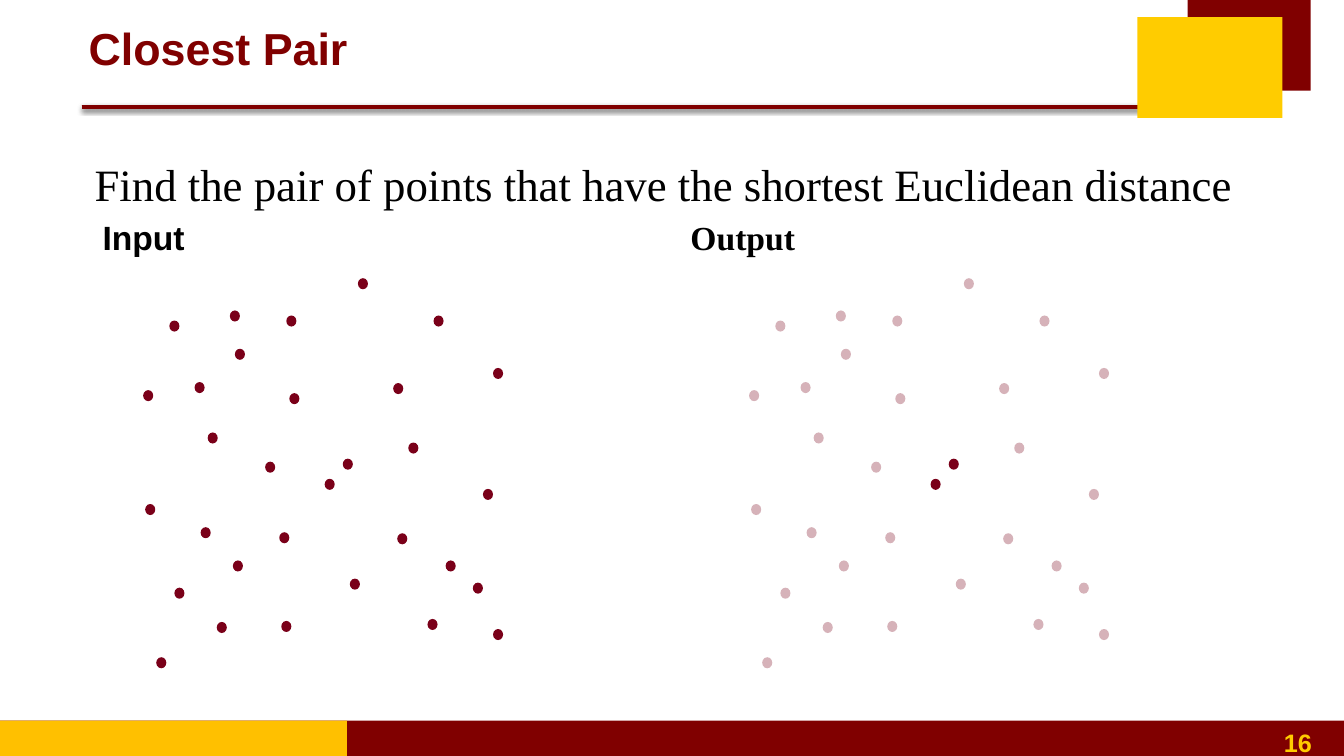
from dataclasses import dataclass
from itertools import combinations
from math import dist

from lxml import etree
from pptx import Presentation
from pptx.dml.color import RGBColor
from pptx.enum.shapes import MSO_CONNECTOR, MSO_SHAPE
from pptx.enum.text import MSO_ANCHOR, PP_ALIGN
from pptx.oxml.ns import qn
from pptx.util import Inches, Pt

MAROON = RGBColor(0x80, 0x00, 0x00)
RED = RGBColor(0xC0, 0x00, 0x00)
YELLOW = RGBColor(0xFF, 0xCC, 0x00)
AMBER = RGBColor(0xFF, 0xC0, 0x00)
DOT_COLOR = RGBColor(0x7A, 0x00, 0x19)
BLACK = RGBColor(0x00, 0x00, 0x00)

RECTANGLE = MSO_SHAPE.RECTANGLE
OVAL = MSO_SHAPE.OVAL
STRAIGHT = MSO_CONNECTOR.STRAIGHT
LEFT, CENTER, RIGHT = PP_ALIGN.LEFT, PP_ALIGN.CENTER, PP_ALIGN.RIGHT
TOP, MIDDLE = MSO_ANCHOR.TOP, MSO_ANCHOR.MIDDLE

SANS = "Arial"
SERIF = "Times New Roman"
DOT_WIDTH, DOT_HEIGHT = 0.1, 0.11
OUTPUT_OFFSET = 6.01
FADED_ALPHA = 30

Point = tuple[float, float]


@dataclass(frozen=True)
class Block:
    left: float
    top: float
    width: float
    height: float
    color: RGBColor


@dataclass(frozen=True)
class Label:
    text: str
    left: float
    top: float
    width: float
    height: float
    size: int
    font: str
    color: RGBColor = BLACK
    bold: bool = True
    align: PP_ALIGN = LEFT
    anchor: MSO_ANCHOR = TOP


BLOCKS = [
    Block(0, 7.15, 13.33, 0.35, MAROON),
    Block(11.78, 0, 1.22, 0.9, MAROON),
    Block(11.28, 0.17, 1.44, 1, YELLOW),
    Block(0, 7.15, 3.44, 0.35, AMBER),
]

LABELS = [
    Label("16", 10.33, 7.17, 2.78, 0.33, 18, SANS, YELLOW, align=RIGHT),
    Label("Closest Pair", 0.78, 0.06, 10.22, 0.83, 32, SANS, MAROON, anchor=MIDDLE),
    Label("Find the pair of points that have the shortest Euclidean distance",
          0.59, 1.51, 11.99, 0.64, 32, SERIF, bold=False, align=CENTER),
    Label("Input", 0.92, 2.1, 5.64, 0.64, 24, SANS),
    Label("Output", 6.75, 2.1, 5.67, 0.64, 24, SERIF),
]

POINTS: list[Point] = [
    (4.3, 3.13), (3.55, 2.76), (2.28, 3.08), (1.68, 3.18), (1.42, 3.87),
    (2.33, 3.46), (2.84, 3.13), (4.89, 3.65), (3.22, 4.75), (3.9, 3.8),
    (2.87, 3.9), (3.4, 4.55), (4.05, 4.39), (4.79, 4.85), (4.69, 5.78),
    (3.94, 5.29), (2.77, 5.28), (2.63, 4.58), (1.93, 3.79), (2.06, 4.29),
    (1.99, 5.23), (1.44, 5), (1.73, 5.83), (1.55, 6.52), (2.15, 6.17),
    (2.31, 5.56), (3.47, 5.74), (4.42, 5.56), (4.24, 6.14), (2.79, 6.16),
    (4.89, 6.24),
]


def add_rule(slide, color: RGBColor) -> None:
    rule = slide.shapes.add_connector(
        STRAIGHT, Inches(0.81), Inches(1.06), Inches(11.37), Inches(1.06))
    rule.line.color.rgb = color
    rule.line.width = Pt(3)
    effects = etree.SubElement(rule.element.spPr, qn("a:effectLst"))
    shadow = etree.SubElement(
        effects, qn("a:outerShdw"), blurRad=str(Pt(3.1)), dist=str(Pt(1.8)),
        dir="5400000", rotWithShape="0")
    shadow_color = etree.SubElement(shadow, qn("a:srgbClr"), val=str(BLACK))
    etree.SubElement(shadow_color, qn("a:alpha"), val="35000")


def add_filled(shapes, kind: MSO_SHAPE, block: Block):
    shape = shapes.add_shape(
        kind, Inches(block.left), Inches(block.top),
        Inches(block.width), Inches(block.height))
    shape.shadow.inherit = False
    shape.fill.solid()
    shape.fill.fore_color.rgb = block.color
    shape.line.fill.background()
    return shape


def add_label(slide, label: Label) -> None:
    box = slide.shapes.add_textbox(
        Inches(label.left), Inches(label.top),
        Inches(label.width), Inches(label.height))
    frame = box.text_frame
    frame.word_wrap = True
    frame.vertical_anchor = label.anchor
    paragraph = frame.paragraphs[0]
    paragraph.text = label.text
    paragraph.alignment = label.align
    paragraph.font.size = Pt(label.size)
    paragraph.font.name = label.font
    paragraph.font.bold = label.bold
    paragraph.font.color.rgb = label.color


def add_dots(slide, offset: float, solid_points: list[Point]) -> None:
    group = slide.shapes.add_group_shape()
    for point in POINTS:
        left, top = point
        dot = add_filled(
            group.shapes, OVAL,
            Block(left + offset, top, DOT_WIDTH, DOT_HEIGHT, DOT_COLOR))
        if point not in solid_points:
            color = dot.element.spPr.find(f"{qn('a:solidFill')}/{qn('a:srgbClr')}")
            etree.SubElement(color, qn("a:alpha"), val=str(FADED_ALPHA * 1000))


def main() -> None:
    presentation = Presentation()
    presentation.slide_width = Inches(13.33)
    presentation.slide_height = Inches(7.5)
    slide = presentation.slides.add_slide(presentation.slide_layouts[6])

    for color in (RED, MAROON):
        add_rule(slide, color)
    for block in BLOCKS:
        add_filled(slide.shapes, RECTANGLE, block)
    for label in LABELS:
        add_label(slide, label)

    closest_pair = min(combinations(POINTS, 2), key=lambda pair: dist(*pair))
    add_dots(slide, 0, POINTS)
    add_dots(slide, OUTPUT_OFFSET, list(closest_pair))

    presentation.save("out.pptx")


if __name__ == "__main__":
    main()
